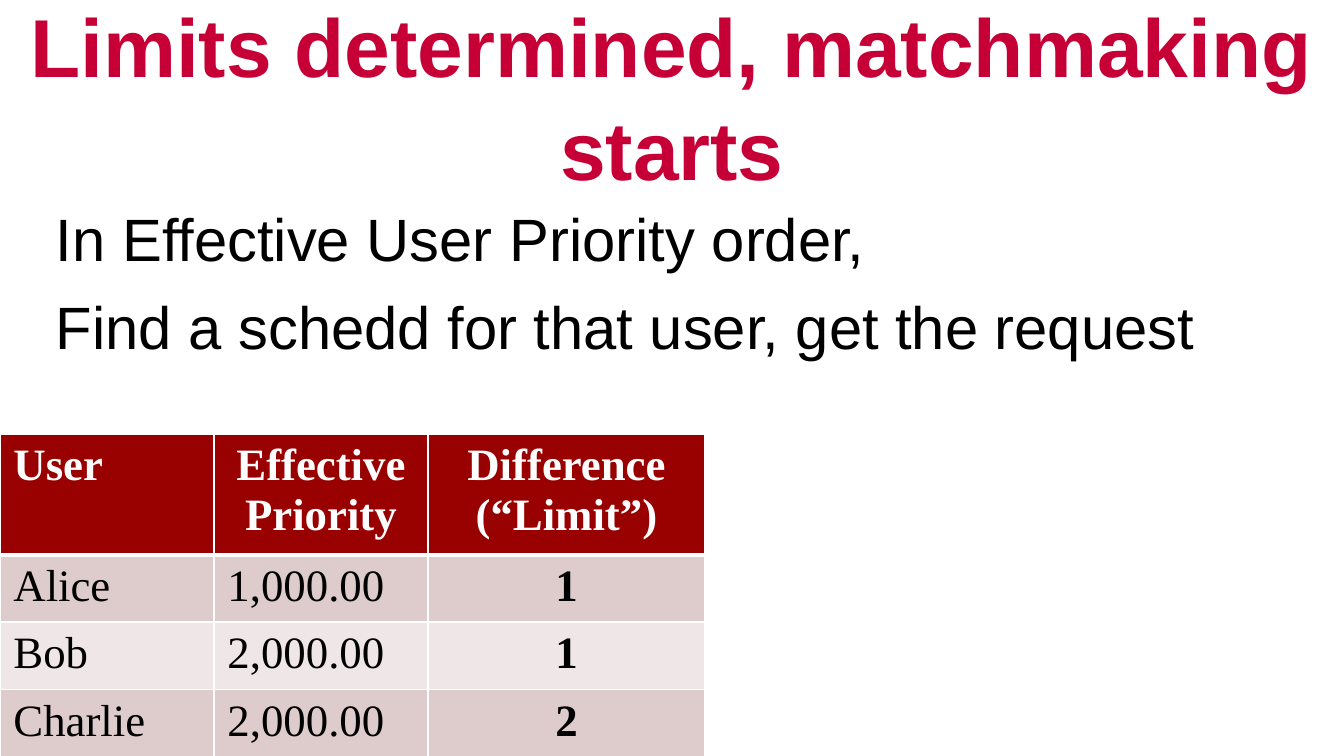
from lxml.etree import SubElement
from pptx import Presentation
from pptx.dml.color import RGBColor
from pptx.enum.text import MSO_ANCHOR, MSO_AUTO_SIZE, PP_ALIGN
from pptx.oxml.ns import qn
from pptx.util import Pt

PX_PER_INCH = 134.4
CRIMSON = RGBColor(0xC6, 0x00, 0x36)
DARK_RED = RGBColor(0x99, 0x00, 0x00)
ROSE = RGBColor(0xDE, 0xCC, 0xCC)
PALE_ROSE = RGBColor(0xEF, 0xE7, 0xE7)
WHITE = RGBColor(0xFF, 0xFF, 0xFF)
BLACK = RGBColor(0x00, 0x00, 0x00)

COLUMN_WIDTHS = (214, 214, 277)
ROW_HEIGHTS = (113, 63, 63, 63)
USER_LIMITS = (
    ("User", "Effective\nPriority", "Difference\n(“Limit”)"),
    ("Alice", "1,000.00", "1"),
    ("Bob", "2,000.00", "1"),
    ("Charlie", "2,000.00", "2"),
)


def px(length):
    return round(length * 914400 / PX_PER_INCH)


def format_text(frame, font, size, color, bold=False, align=PP_ALIGN.LEFT):
    for paragraph in frame.paragraphs:
        paragraph.alignment = align
        for run in paragraph.runs:
            run.font.name = font
            run.font.size = Pt(size)
            run.font.bold = bold
            run.font.color.rgb = color


def set_title(slide, text):
    title = slide.shapes.title
    title.left, title.top, title.width, title.height = px(0), px(43), px(1344), px(101)
    frame = title.text_frame
    frame.text = text
    frame.auto_size = MSO_AUTO_SIZE.NONE
    frame.vertical_anchor = MSO_ANCHOR.MIDDLE
    frame.paragraphs[0].line_spacing = 1.05
    format_text(frame, "Arial", 44, CRIMSON, bold=True, align=PP_ALIGN.CENTER)


def add_steps(slide, text):
    frame = slide.shapes.add_textbox(px(47), px(192), px(1235), px(466)).text_frame
    frame.word_wrap = True
    frame.margin_left = px(9)
    frame.text = text
    for paragraph in frame.paragraphs:
        paragraph.line_spacing = 1.05
        paragraph.space_before = Pt(6.4)
    format_text(frame, "Arial", 32, BLACK)


def set_borders(cell, bottom_width):
    """Draw white lines on all four sides of a table cell."""
    properties = cell._tc.get_or_add_tcPr()
    for side, width in (("L", 1), ("R", 1), ("T", 1), ("B", bottom_width)):
        line = SubElement(properties, qn(f"a:ln{side}"), w=str(Pt(width)))
        fill = SubElement(line, qn("a:solidFill"))
        SubElement(fill, qn("a:srgbClr"), val=str(WHITE))


def fill_cell(cell, text, row, column):
    header = row == 0
    limit = column == len(COLUMN_WIDTHS) - 1
    centered = limit or (header and column > 0)
    set_borders(cell, 3 if header else 1)
    cell.fill.solid()
    cell.fill.fore_color.rgb = DARK_RED if header else (PALE_ROSE, ROSE)[row % 2]
    cell.text_frame.text = text
    format_text(cell.text_frame, "Times New Roman", 24, WHITE if header else BLACK,
                bold=header or limit,
                align=PP_ALIGN.CENTER if centered else PP_ALIGN.LEFT)


def add_limits_table(slide):
    table = slide.shapes.add_table(
        len(ROW_HEIGHTS), len(COLUMN_WIDTHS), px(0), px(434),
        px(sum(COLUMN_WIDTHS)), px(sum(ROW_HEIGHTS))).table
    for column, width in zip(table.columns, COLUMN_WIDTHS):
        column.width = px(width)
    for row, height in zip(table.rows, ROW_HEIGHTS):
        row.height = px(height)
    for row, texts in enumerate(USER_LIMITS):
        for column, text in enumerate(texts):
            fill_cell(table.cell(row, column), text, row, column)


def main():
    presentation = Presentation()
    presentation.slide_width, presentation.slide_height = px(1344), px(756)
    slide = presentation.slides.add_slide(presentation.slide_layouts[5])
    add_steps(slide, "In Effective User Priority order,\n"
                     "Find a schedd for that user, get the request")
    set_title(slide, "Limits determined, matchmaking starts")
    add_limits_table(slide)
    presentation.save("out.pptx")


if __name__ == "__main__":
    main()
